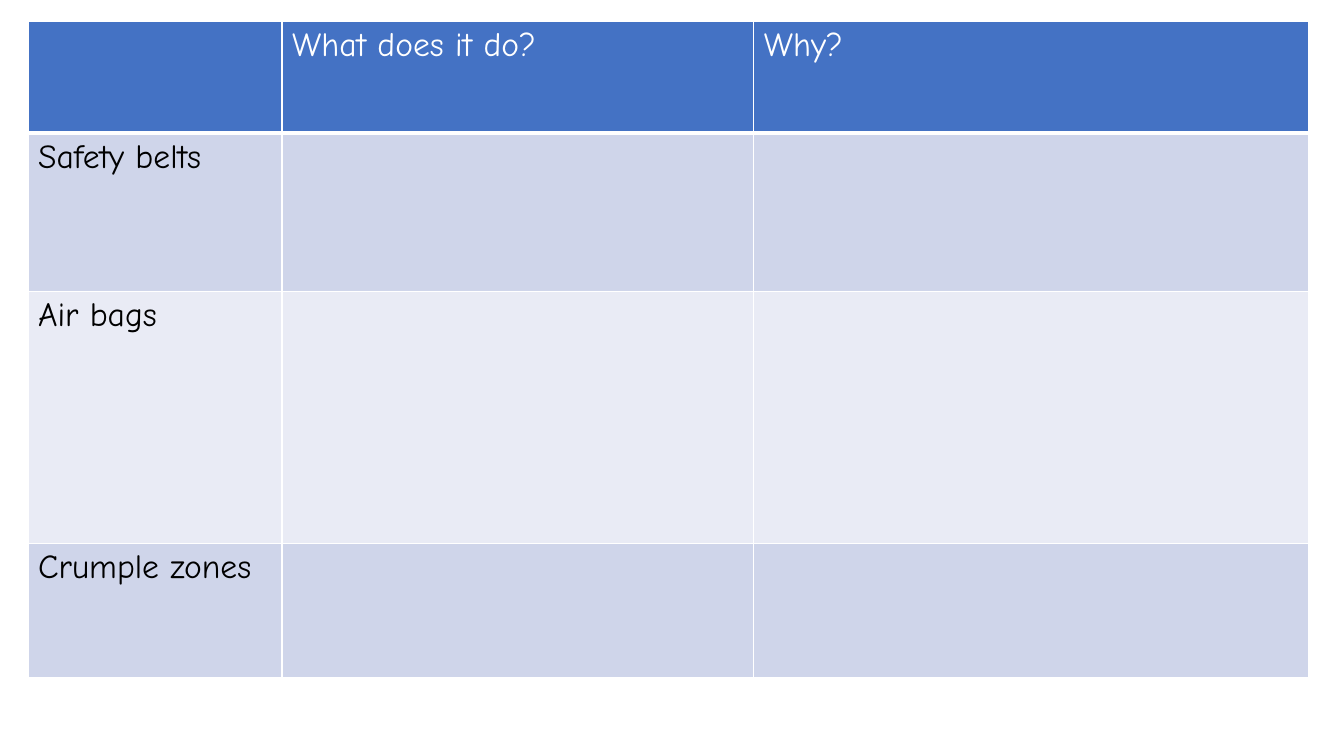
from lxml.etree import SubElement
from pptx import Presentation
from pptx.dml.color import RGBColor
from pptx.oxml.ns import qn
from pptx.util import Pt

HEADINGS = ["", "What does it do?", "Why?"]
FEATURES = ["Safety belts", "Air bags", "Crumple zones"]
COLUMN_WIDTHS = [181.5, 337, 396.5]
ROW_HEIGHTS = [80, 113, 180, 96]
LEFT, TOP = 20, 15
FONT, FONT_SIZE = "Comic Neue", 24
COLOURS = {
    "header": "4472C4",
    "odd": "CFD5EA",
    "even": "E9EBF5",
    "border": "FFFFFF",
    "heading": "FFFFFF",
    "feature": "000000",
}


def add_borders(cell, widths):
    properties = cell._tc.get_or_add_tcPr()
    for index, (side, width) in enumerate(widths.items()):
        line = SubElement(properties, qn(f"a:ln{side}"), w=str(Pt(width)))
        solid = SubElement(line, qn("a:solidFill"))
        SubElement(solid, qn("a:srgbClr"), val=COLOURS["border"])
        properties.insert(index, line)


def fill_cell(cell, words, fill, ink):
    cell.fill.solid()
    cell.fill.fore_color.rgb = RGBColor.from_string(COLOURS[fill])
    if words:
        run = cell.text_frame.paragraphs[0].add_run()
        run.text = words
        run.font.name = FONT
        run.font.size = Pt(FONT_SIZE)
        run.font.bold = False
        run.font.color.rgb = RGBColor.from_string(COLOURS[ink])


def main():
    deck = Presentation()
    deck.slide_width, deck.slide_height = Pt(960), Pt(540)
    slide = deck.slides.add_slide(deck.slide_layouts[6])

    rows = [HEADINGS] + [[feature, "", ""] for feature in FEATURES]
    worksheet = slide.shapes.add_table(
        len(rows), len(HEADINGS), Pt(LEFT), Pt(TOP),
        Pt(sum(COLUMN_WIDTHS)), Pt(sum(ROW_HEIGHTS)),
    ).table
    for column, width in zip(worksheet.columns, COLUMN_WIDTHS):
        column.width = Pt(width)
    for row, height in zip(worksheet.rows, ROW_HEIGHTS):
        row.height = Pt(height)

    for r, row in enumerate(rows):
        fill = "header" if r == 0 else "odd" if r % 2 else "even"
        ink = "heading" if r == 0 else "feature"
        borders = {"L": 1, "R": 1, "T": 3 if r == 1 else 1, "B": 3 if r == 0 else 1}
        for c, words in enumerate(row):
            cell = worksheet.cell(r, c)
            fill_cell(cell, words, fill, ink)
            add_borders(cell, borders)

    deck.save("out.pptx")


if __name__ == "__main__":
    main()
